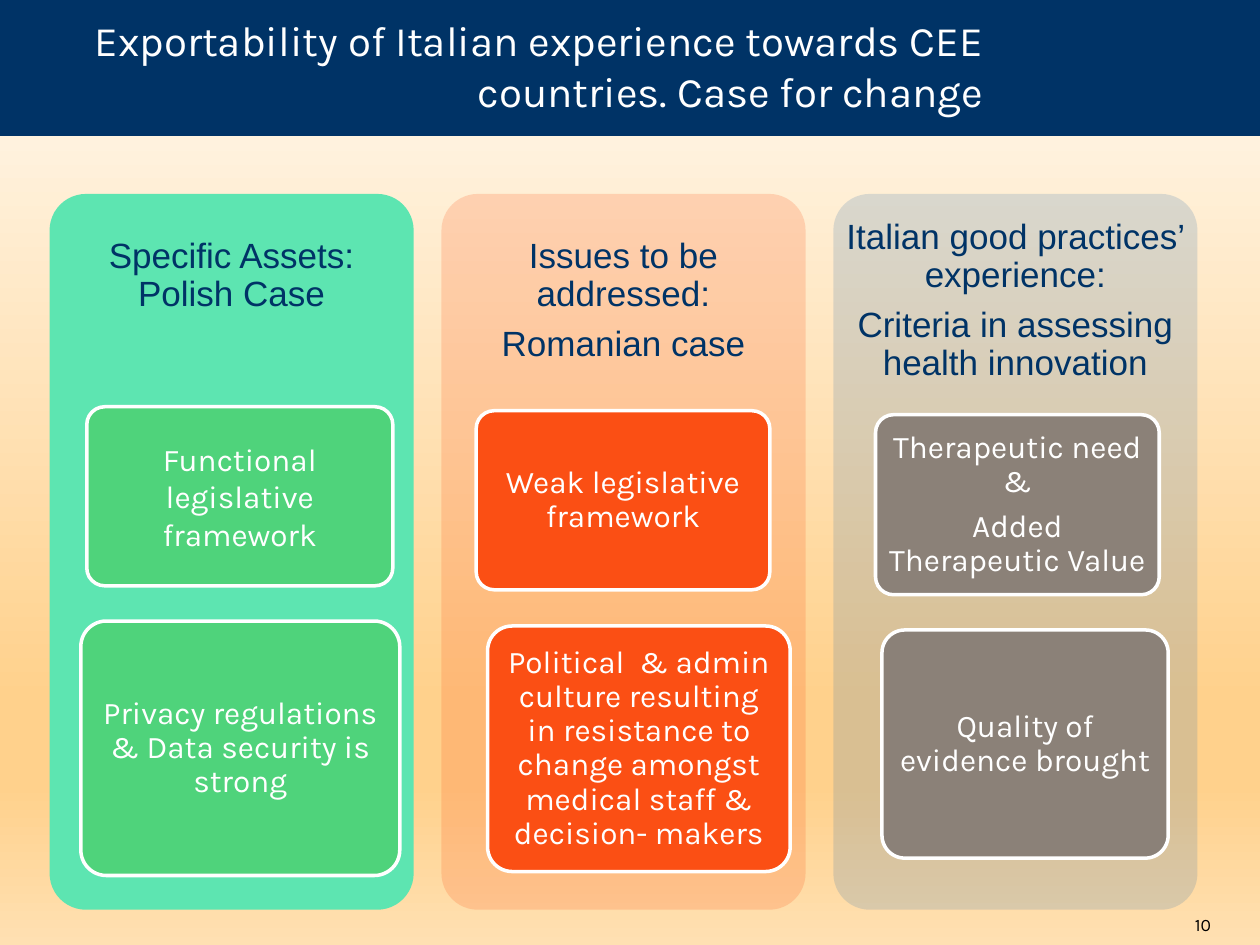
"""Build the slide on exporting the Italian experience to CEE countries."""
from dataclasses import dataclass

from lxml.etree import SubElement
from pptx import Presentation
from pptx.dml.color import RGBColor
from pptx.enum.shapes import MSO_SHAPE as Preset
from pptx.enum.text import MSO_ANCHOR as Anchor, PP_ALIGN as Align
from pptx.oxml.ns import qn
from pptx.util import Cm, Pt

NAVY = RGBColor(0x00, 0x33, 0x66)
WHITE = RGBColor(0xFF, 0xFF, 0xFF)
BLACK = RGBColor(0x00, 0x00, 0x00)
MINT = RGBColor(0x5D, 0xE5, 0xB1)
GREEN = RGBColor(0x4F, 0xD3, 0x7B)
ORANGE = RGBColor(0xFB, 0x4F, 0x14)
BLUE = RGBColor(0x39, 0x73, 0xAC)
TAUPE = RGBColor(0x8B, 0x81, 0x78)
BACKGROUND_STOPS = {
    0: RGBColor(0xFF, 0xFA, 0xF2),
    74: RGBColor(0xFF, 0xD1, 0x8C),
    83: RGBColor(0xFF, 0xD1, 0x8C),
    100: RGBColor(0xFF, 0xE0, 0xB2),
}

PANEL_LEFT, PANEL_TOP, PANEL_PITCH = 1.0, 3.91, 7.9
PANEL_WIDTH, PANEL_HEIGHT, HEADING_HEIGHT = 7.34, 14.43, 4.32
NO_INSETS = (0, 0, 0, 0)
CARD_INSETS = (0.13, 0.1, 0.13, 0.1)
HEADING_INSETS = (0.2, 0.2, 0.2, 0.2)
RAISED_INSETS = (0.2, 0.2, 0.2, 1.2)

TIGHT = {"alignment": Align.CENTER, "line_spacing": 0.9}
HEADING_FORMAT = TIGHT | {"space_after": Pt(7)}
CARD_FORMAT = TIGHT | {"space_after": Pt(6.3)}
PLAIN_FORMAT = {"alignment": Align.CENTER}
RIGHT_FORMAT = {"alignment": Align.RIGHT}


@dataclass(frozen=True)
class Area:
    left: float
    top: float
    width: float
    height: float

    def lengths(self) -> list[Cm]:
        return [Cm(value) for value in (self.left, self.top, self.width, self.height)]


@dataclass(frozen=True)
class Card:
    area: Area
    lines: tuple[str, ...]
    format: dict


@dataclass(frozen=True)
class Panel:
    heading: tuple[str, ...]
    insets: tuple[float, ...]
    fill: RGBColor
    opacity: int
    card_fill: RGBColor
    cards: tuple[Card, ...]


PANELS = (
    Panel(("Specific Assets: Polish Case",), RAISED_INSETS, MINT, 100, GREEN, (
        Card(Area(1.75, 8.2, 6.17, 3.61), ("Functional legislative framework",), PLAIN_FORMAT),
        Card(Area(1.63, 12.52, 6.43, 5.13),
             ("Privacy regulations & Data security is strong",), CARD_FORMAT),
    )),
    Panel(("Issues to be addressed:", "Romanian case"), HEADING_INSETS, ORANGE, 19, ORANGE, (
        Card(Area(9.6, 8.28, 5.92, 3.61), ("Weak legislative framework",), CARD_FORMAT),
        Card(Area(9.83, 12.62, 6.1, 4.95),
             ("Political  & admin culture resulting in resistance to change "
              "amongst medical staff & decision- makers",), CARD_FORMAT),
    )),
    Panel(("Italian good practices’ experience:", "Criteria in assessing health innovation"),
          HEADING_INSETS, BLUE, 19, TAUPE, (
        Card(Area(17.65, 8.36, 5.72, 3.63),
             ("Therapeutic need &", "Added Therapeutic Value"), CARD_FORMAT),
        Card(Area(17.78, 12.7, 5.77, 4.6), ("Quality of evidence brought",), CARD_FORMAT),
    )),
)


def set_attributes(target, values: dict) -> None:
    for name, value in values.items():
        setattr(target, name, value)


def add_stop(stops, position: int, color: RGBColor) -> None:
    stop = SubElement(stops, qn("a:gs"), pos=str(position * 1000))
    SubElement(stop, qn("a:srgbClr"), val=str(color))


def paint_background(page) -> None:
    fill = page.background.fill
    fill.gradient()
    fill.gradient_angle = 270
    stops = next(page.element.iter(qn("a:gsLst")))
    for stop in list(stops):
        stops.remove(stop)
    for position, color in BACKGROUND_STOPS.items():
        add_stop(stops, position, color)


def add_box(page, preset: Preset, area: Area, color: RGBColor, opacity: int = 100):
    box = page.shapes.add_shape(preset, *area.lengths())
    box.shadow.inherit = False
    box.fill.solid()
    box.fill.fore_color.rgb = color
    box.line.fill.background()
    if preset == Preset.ROUNDED_RECTANGLE:
        box.adjustments[0] = 0.1
    if opacity < 100:
        paint = box.element.spPr.find(qn("a:solidFill"))
        SubElement(paint[0], qn("a:alpha"), val=str(opacity * 1000))
    return box


def write(box, lines: tuple[str, ...], font: str, size: int, color: RGBColor,
          format: dict, insets: tuple[float, ...], anchor: Anchor) -> None:
    frame = box.text_frame
    sides = ("margin_left", "margin_top", "margin_right", "margin_bottom")
    set_attributes(frame, {"word_wrap": True, "vertical_anchor": anchor}
                   | {side: Cm(inset) for side, inset in zip(sides, insets)})
    for index, line in enumerate(lines):
        para = frame.add_paragraph() if index else frame.paragraphs[0]
        set_attributes(para, format)
        span = para.add_run()
        span.text = line
        set_attributes(span.font, {"name": font, "size": Pt(size)})
        span.font.color.rgb = color


def add_panel(page, panel: Panel, left: float) -> None:
    add_box(page, Preset.ROUNDED_RECTANGLE,
            Area(left, PANEL_TOP, PANEL_WIDTH, PANEL_HEIGHT), panel.fill, panel.opacity)
    heading = page.shapes.add_textbox(
        *Area(left, PANEL_TOP, PANEL_WIDTH, HEADING_HEIGHT).lengths())
    write(heading, panel.heading, "Arial", 20, NAVY, HEADING_FORMAT, panel.insets, Anchor.MIDDLE)
    for card in panel.cards:
        box = add_box(page, Preset.ROUNDED_RECTANGLE, card.area, panel.card_fill)
        box.line.color.rgb = WHITE
        box.line.width = Pt(2)
        write(box, card.lines, "Karla", 18, WHITE, card.format, CARD_INSETS, Anchor.MIDDLE)


def main() -> None:
    deck = Presentation()
    set_attributes(deck, {"slide_width": Cm(25.4), "slide_height": Cm(19.05)})
    page = deck.slides.add_slide(deck.slide_layouts[6])
    paint_background(page)
    add_box(page, Preset.RECTANGLE, Area(0, 0, 25.4, 2.74), NAVY)
    title = page.shapes.add_textbox(*Area(1, 0.3, 18.82, 1.88).lengths())
    write(title, ("Exportability of Italian experience towards CEE countries. Case for change",),
          "Karla", 24, WHITE, RIGHT_FORMAT, NO_INSETS, Anchor.TOP)
    number = page.shapes.add_textbox(*Area(21.92, 18.34, 2.49, 0.51).lengths())
    write(number, ("10",), "Karla", 10, BLACK, RIGHT_FORMAT, NO_INSETS, Anchor.BOTTOM)
    for index, panel in enumerate(PANELS):
        add_panel(page, panel, PANEL_LEFT + index * PANEL_PITCH)
    deck.save("out.pptx")


if __name__ == "__main__":
    main()
